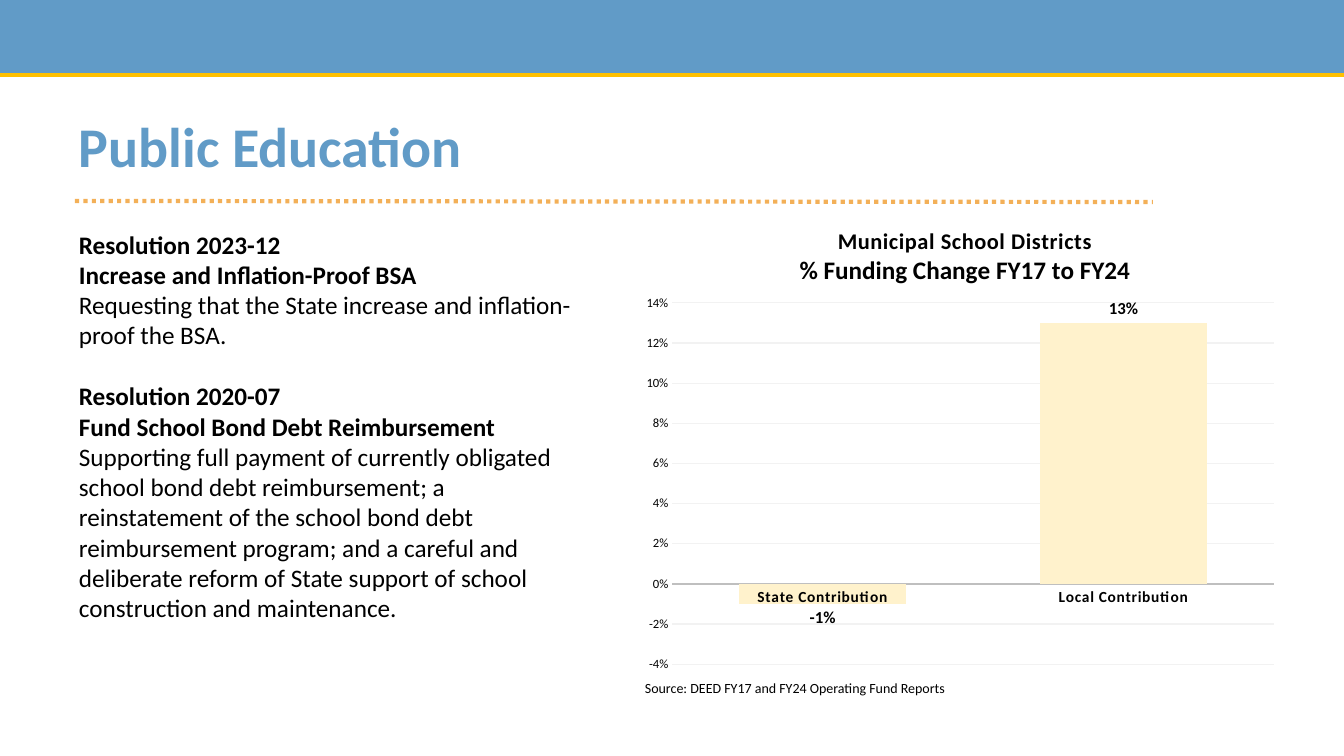
from lxml import etree
from pptx import Presentation
from pptx.chart.data import CategoryChartData
from pptx.dml.color import RGBColor
from pptx.enum.chart import XL_CHART_TYPE, XL_LABEL_POSITION, XL_TICK_MARK
from pptx.enum.dml import MSO_LINE
from pptx.enum.shapes import MSO_CONNECTOR, MSO_SHAPE
from pptx.oxml.ns import qn
from pptx.util import Emu, Pt

COLUMNS = XL_CHART_TYPE.COLUMN_CLUSTERED
OUTSIDE_END = XL_LABEL_POSITION.OUTSIDE_END
NO_TICKS = XL_TICK_MARK.NONE
STRAIGHT = MSO_CONNECTOR.STRAIGHT
RECTANGLE = MSO_SHAPE.RECTANGLE
DOTTED = MSO_LINE.ROUND_DOT

EMU_PER_PX = 914400 / 100.8
SLIDE_W, SLIDE_H = 1344, 756
FONT = "Calibri"
COLORS = {
    "blue": "619BC7", "gold": "FFC000", "orange": "F3B058", "text": "000000",
    "bar": "FFF2CC", "axis": "BFBFBF", "grid": "F2F2F2",
}
RESOLUTIONS = [
    ("Resolution 2023-12", "Increase and Inflation-Proof BSA",
     "Requesting that the State increase and inflation-proof the BSA."),
    ("Resolution 2020-07", "Fund School Bond Debt Reimbursement",
     "Supporting full payment of currently obligated school bond debt "
     "reimbursement; a reinstatement of the school bond debt reimbursement "
     "program; and a careful and deliberate reform of State support of school "
     "construction and maintenance."),
]
FUNDING_CHANGE = {"State Contribution": -0.01, "Local Contribution": 0.13}
CHART_TITLE = [("Municipal School Districts", 16, 50),
               ("% Funding Change FY17 to FY24", 18, 0)]


def px(length):
    return Emu(round(length * EMU_PER_PX))


def rgb(name):
    return RGBColor.from_string(COLORS[name])


def style_font(font, size, color="text", bold=False):
    font.name = FONT
    font.size = Pt(size)
    font.bold = bold
    font.color.rgb = rgb(color)


def add_rule(slide, start, end, color, dash=None):
    rule = slide.shapes.add_connector(STRAIGHT, *map(px, start + end))
    rule.line.color.rgb = rgb(color)
    rule.line.width = Pt(3)
    if dash:
        rule.line.dash_style = dash
    etree.SubElement(rule._element.spPr, qn("a:effectLst"))


def add_text_frame(slide, box, wrap=True):
    frame = slide.shapes.add_textbox(*map(px, box)).text_frame
    frame.word_wrap = wrap
    return frame


def add_banner(slide, box):
    left, top, width, height = box
    banner = slide.shapes.add_shape(RECTANGLE, *map(px, box))
    banner.shadow.inherit = False
    banner.fill.solid()
    banner.fill.fore_color.rgb = rgb("blue")
    banner.line.fill.background()
    bottom = top + height
    add_rule(slide, (left, bottom), (left + width, bottom), "gold")


def add_heading(slide, box):
    left, top, _, height = box
    rule_y = top + height + 15
    add_rule(slide, (left + 6, rule_y), (left + 1084, rule_y + 1), "orange", DOTTED)
    heading = add_text_frame(slide, box).paragraphs[0]
    heading.text = "Public Education"
    heading.line_spacing = Pt(40)
    style_font(heading.runs[0].font, 40, "blue", True)


def add_resolutions(slide, box):
    frame = add_text_frame(slide, box)
    lines = [line for resolution in RESOLUTIONS for line in resolution]
    frame.text = "\n".join(lines)
    parts = len(RESOLUTIONS[0])
    for index, paragraph in enumerate(frame.paragraphs):
        is_request = index % parts == parts - 1
        style_font(paragraph.runs[0].font, 18, bold=not is_request)
        if index and index % parts == 0:
            paragraph.space_before = Pt(22)


def set_layout(parent, position, **settings):
    """Place a chart part by fractions of the chart's size."""
    for old in parent.findall(qn("c:layout")):
        parent.remove(old)
    layout = etree.Element(qn("c:layout"))
    manual = etree.SubElement(layout, qn("c:manualLayout"))
    for tag, value in settings.items():
        etree.SubElement(manual, qn(f"c:{tag}")).set("val", str(value))
    parent.insert(position, layout)


def format_axes(chart):
    categories, values = chart.category_axis, chart.value_axis
    for axis, size, bold in ((categories, 11, True), (values, 9, False)):
        axis.major_tick_mark = axis.minor_tick_mark = NO_TICKS
        style_font(axis.tick_labels.font, size, bold=bold)
    categories.has_major_gridlines = False
    categories.format.line.color.rgb = rgb("axis")
    categories.format.line.width = Pt(1.25)
    text_defaults = categories.tick_labels.font._element
    text_defaults.set("spc", "40")
    values.minimum_scale, values.maximum_scale = -0.04, 0.14
    values.major_unit = 0.02
    values.tick_labels.number_format = "0%"
    values.tick_labels.number_format_is_linked = False
    values.format.line.fill.background()
    values.major_gridlines.format.line.color.rgb = rgb("grid")
    values.major_gridlines.format.line.width = Pt(0.75)


def format_columns(plot):
    plot.gap_width, plot.overlap = 80, 25
    plot.vary_by_categories = False
    series = plot.series[0]
    series.invert_if_negative = False
    series.format.fill.solid()
    series.format.fill.fore_color.rgb = rgb("bar")
    labels = series.data_labels
    labels.show_value = True
    labels.position = OUTSIDE_END
    labels.number_format = "0%"
    labels.number_format_is_linked = False
    style_font(labels.font, 12, bold=True)


def add_funding_chart(slide, box):
    data = CategoryChartData(number_format="0%")
    data.categories = list(FUNDING_CHANGE)
    data.add_series("Series 1", list(FUNDING_CHANGE.values()))
    chart = slide.shapes.add_chart(COLUMNS, *map(px, box), data).chart
    chart.has_legend = False
    style_font(chart.font, 10)

    title = chart.chart_title
    title.text_frame.text = "\n".join(line for line, _, _ in CHART_TITLE)
    for paragraph, (_, size, spacing) in zip(title.text_frame.paragraphs, CHART_TITLE):
        run = paragraph.runs[0]
        style_font(run.font, size, bold=True)
        run.font._element.set("spc", str(spacing))
    title.include_in_layout = False
    set_layout(title._element, 1, xMode="edge", yMode="edge", x=0.25, y=0.04)
    set_layout(chart._chartSpace.chart.plotArea, 0, layoutTarget="inner",
               xMode="edge", yMode="edge", x=0.06, y=0.207, w=0.92, h=0.756)
    format_axes(chart)
    format_columns(chart.plots[0])


def add_source(slide, box):
    frame = add_text_frame(slide, box, wrap=False)
    frame.text = "Source: DEED FY17 and FY24 Operating Fund Reports"
    style_font(frame.paragraphs[0].runs[0].font, 10)


def main():
    deck = Presentation()
    deck.slide_width, deck.slide_height = px(SLIDE_W), px(SLIDE_H)
    slide = deck.slides.add_slide(deck.slide_layouts[6])
    add_banner(slide, (0, -1, SLIDE_W, 76))
    add_heading(slide, (69, 118, 1252, 68))
    add_resolutions(slide, (69, 224, 536, 407))
    add_funding_chart(slide, (633, 204, 654, 478))
    add_source(slide, (635, 675, 326, 27))
    deck.save("out.pptx")


if __name__ == "__main__":
    main()
